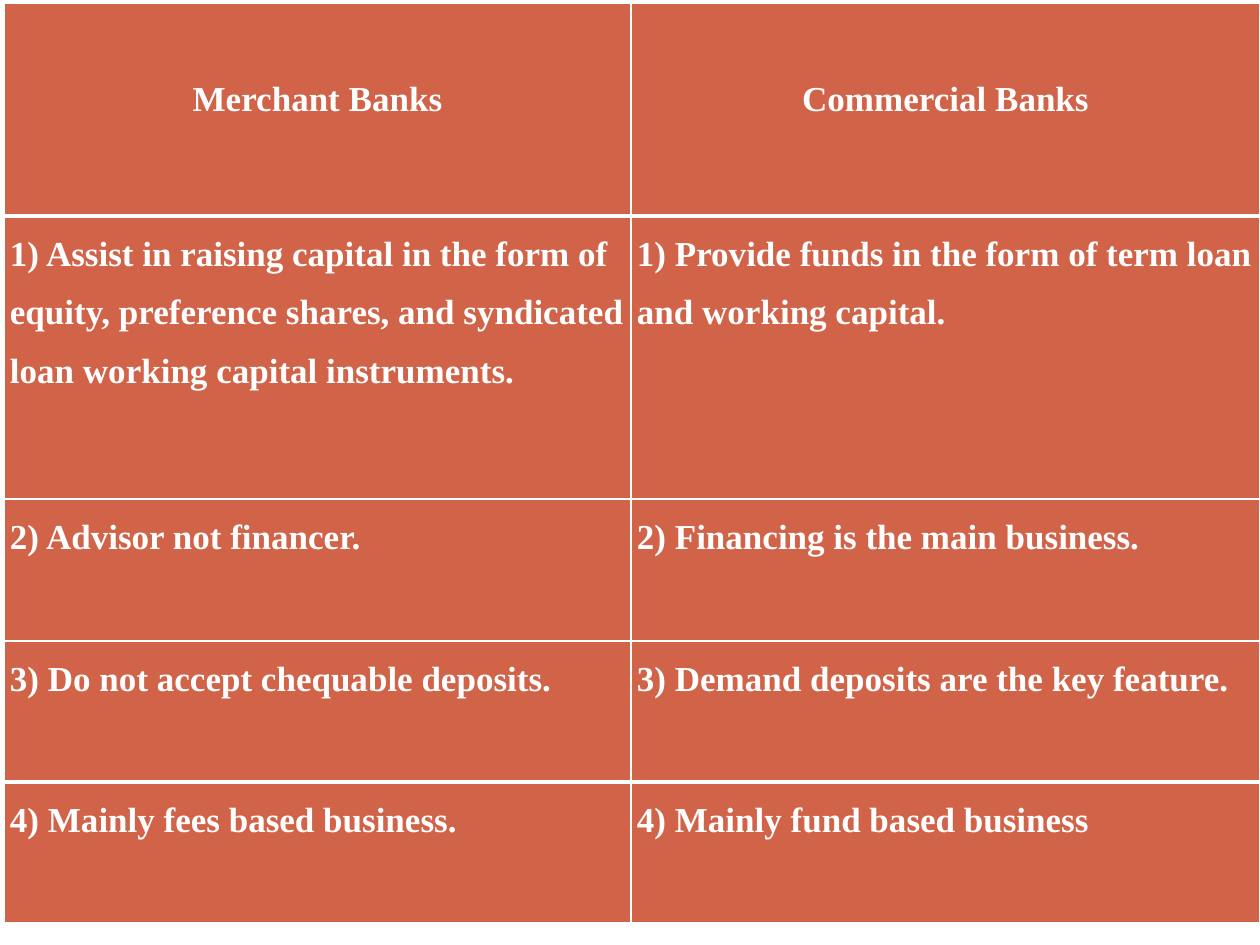
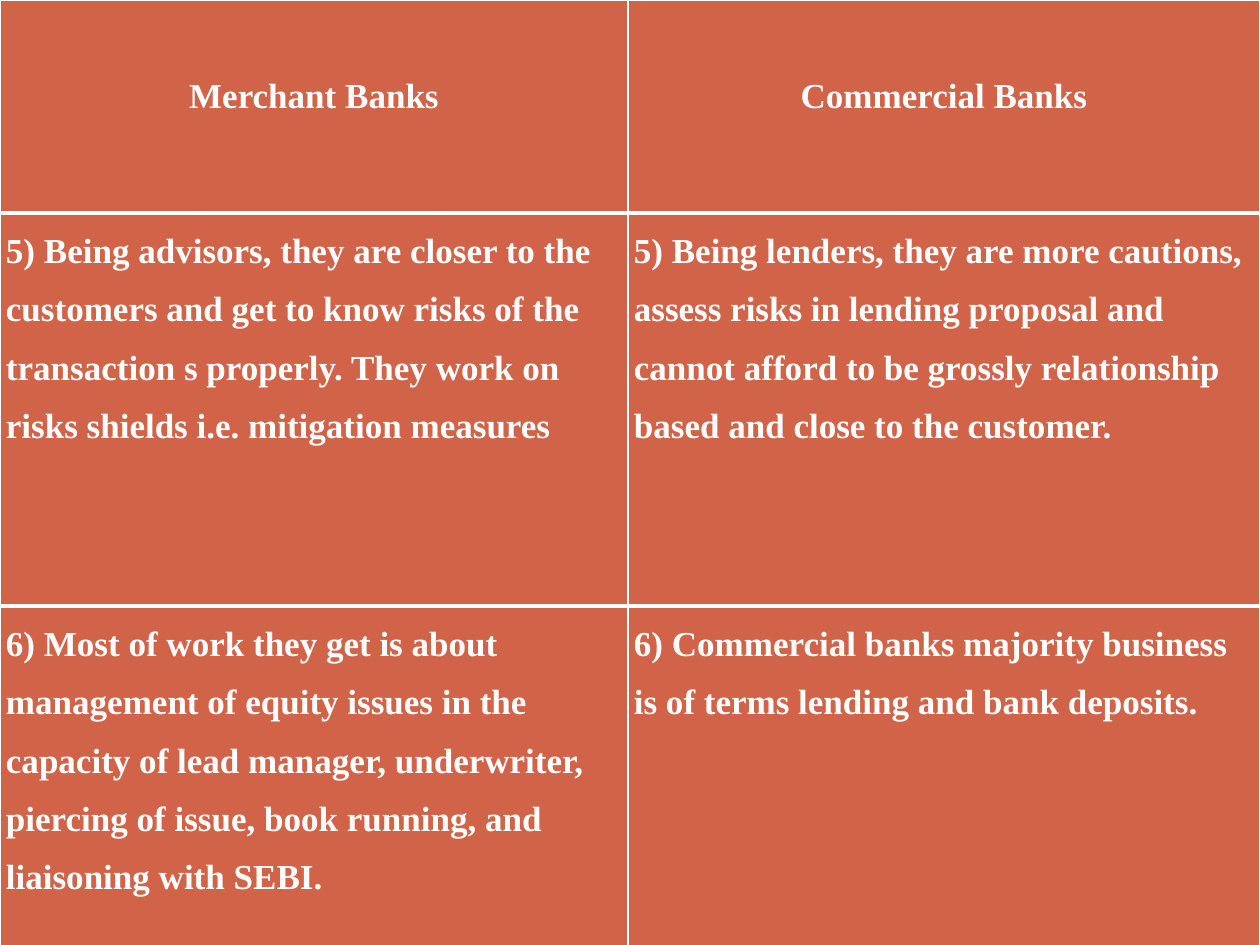
from dataclasses import dataclass

from lxml import etree
from pptx import Presentation
from pptx.dml.color import RGBColor
from pptx.enum.dml import MSO_LINE
from pptx.enum.shapes import MSO_CONNECTOR, MSO_SHAPE
from pptx.enum.text import PP_ALIGN
from pptx.oxml.ns import qn
from pptx.util import Emu, Pt

LEFT = PP_ALIGN.LEFT
CENTER = PP_ALIGN.CENTER
RECT = MSO_SHAPE.RECTANGLE
OVAL = MSO_SHAPE.OVAL
STRAIGHT = MSO_CONNECTOR.STRAIGHT
DASH = MSO_LINE.SQUARE_DOT


@dataclass
class Theme:
    white: RGBColor = RGBColor.from_string("FFFFFF")
    brick: RGBColor = RGBColor.from_string("D16349")
    mist: RGBColor = RGBColor.from_string("C5D1D7")
    sage: RGBColor = RGBColor.from_string("8CADAE")
    slate: RGBColor = RGBColor.from_string("7C999A")
    font: str = "Times New Roman"
    size: int = 20
    leading: float = 1.5
    thin: int = 1
    thick: int = 3
    hair: float = 0.75
    ring: int = 4
    inset: int = 6
    drop: int = 58


theme = Theme()


def px(count):
    return Emu(round(count * 914400 / 126))


def edge(cell, sides):
    props = cell._tc.get_or_add_tcPr()
    for spot, (side, width) in enumerate(sides.items()):
        line = etree.Element(qn(f"a:ln{side}"), w=str(Pt(width)))
        fill = etree.SubElement(line, qn("a:solidFill"))
        etree.SubElement(fill, qn("a:srgbClr"), val=str(theme.white))
        props.insert(spot, line)


heads = ("Merchant Banks", "Commercial Banks")

pages = [
    {
        "origin": (4, 3),
        "cols": (627, 629),
        "rows": (213, 283, 142, 141, 141),
        "pairs": [
            (
                "1) Assist in raising capital in the form of equity, preference shares, "
                "and syndicated loan working capital instruments.",
                "1) Provide funds in the form of term loan and working capital.",
            ),
            ("2) Advisor not financer.", "2) Financing is the main business."),
            (
                "3) Do not accept chequable deposits.",
                "3) Demand deposits are the key feature.",
            ),
            ("4) Mainly fees based business.", "4) Mainly fund based business"),
        ],
    },
    {
        "origin": (0, 0),
        "cols": (628, 632),
        "rows": (213, 393, 355),
        "pairs": [
            (
                "5) Being advisors, they are closer to the customers and get to know "
                "risks of the transaction s properly. They work on risks shields i.e. "
                "mitigation measures",
                "5) Being lenders, they are more cautions, assess risks in lending "
                "proposal and cannot afford to be grossly relationship based and close "
                "to the customer.",
            ),
            (
                "6) Most of work they get is about management of equity issues in the "
                "capacity of lead manager, underwriter, piercing of issue, book running, "
                "and liaisoning with SEBI.",
                "6) Commercial banks majority business is of terms lending and bank "
                "deposits.",
            ),
        ],
    },
]

deck = Presentation()
deck.slide_width = px(1260)
deck.slide_height = px(945)
master = deck.slide_master
back = master.background.fill
back.solid()
back.fore_color.rgb = theme.mist
blank = deck.slide_layouts[6]
slides = [deck.slides.add_slide(blank) for page in pages]

decor = [
    (RECT, (0, 924, 1260, 21), theme.white, None),
    (RECT, (0, 0, 1260, 192), theme.white, None),
    (RECT, (0, 0, 21, 945), theme.white, None),
    (RECT, (1239, 0, 21, 945), theme.white, None),
    (RECT, (20, 881, 1217, 43), theme.sage, None),
    (RECT, (21, 21, 1217, 902), None, theme.hair),
    (None, (21, 176, 1239, 176), None, theme.hair),
    (OVAL, (588, 132, 84, 84), theme.white, None),
    (OVAL, (601, 145, 58, 58), theme.white, theme.ring),
]
for num, (kind, spot, paint, stroke) in enumerate(decor, 20):
    spot = [px(n) for n in spot]
    if kind is None:
        part = slides[0].shapes.add_connector(STRAIGHT, *spot)
        part.line.dash_style = DASH
        etree.SubElement(part._element.spPr, qn("a:effectLst"))
    else:
        part = slides[0].shapes.add_shape(kind, *spot)
        part.shadow.inherit = False
        if paint is None:
            part.fill.background()
        else:
            part.fill.solid()
            part.fill.fore_color.rgb = paint
    if stroke is None:
        part.line.fill.background()
    else:
        part.line.color.rgb = theme.slate
        part.line.width = Pt(stroke)
    part._element.xpath(".//p:cNvPr")[0].set("id", str(num))
    master.shapes._spTree.append(part._element)

for slide, page in zip(slides, pages):
    cols, rows = page["cols"], page["rows"]
    left, top = page["origin"]
    frame = slide.shapes.add_table(
        len(rows), len(cols), px(left), px(top), px(sum(cols)), px(sum(rows))
    )
    table = frame.table
    table.horz_banding = False
    for col, width in zip(table.columns, cols):
        col.width = px(width)
    for row, height in zip(table.rows, rows):
        row.height = px(height)

    last = len(rows) - 1
    rules = [theme.thick if n in (1, last) else theme.thin for n in range(last + 2)]

    for r, pair in enumerate([heads, *page["pairs"]]):
        for c, words in enumerate(pair):
            cell = table.cell(r, c)
            cell.fill.solid()
            cell.fill.fore_color.rgb = theme.brick
            cell.margin_left = cell.margin_right = px(theme.inset)
            cell.margin_top = px(0 if r else theme.drop)
            cell.margin_bottom = 0
            edge(
                cell,
                {"L": theme.thin, "R": theme.thin, "T": rules[r], "B": rules[r + 1]},
            )
            para = cell.text_frame.paragraphs[0]
            para.alignment = LEFT if r else CENTER
            para.line_spacing = theme.leading
            run = para.add_run()
            run.text = words
            run.font.name = theme.font
            run.font.size = Pt(theme.size)
            run.font.bold = True
            run.font.color.rgb = theme.white

deck.save("out.pptx")
